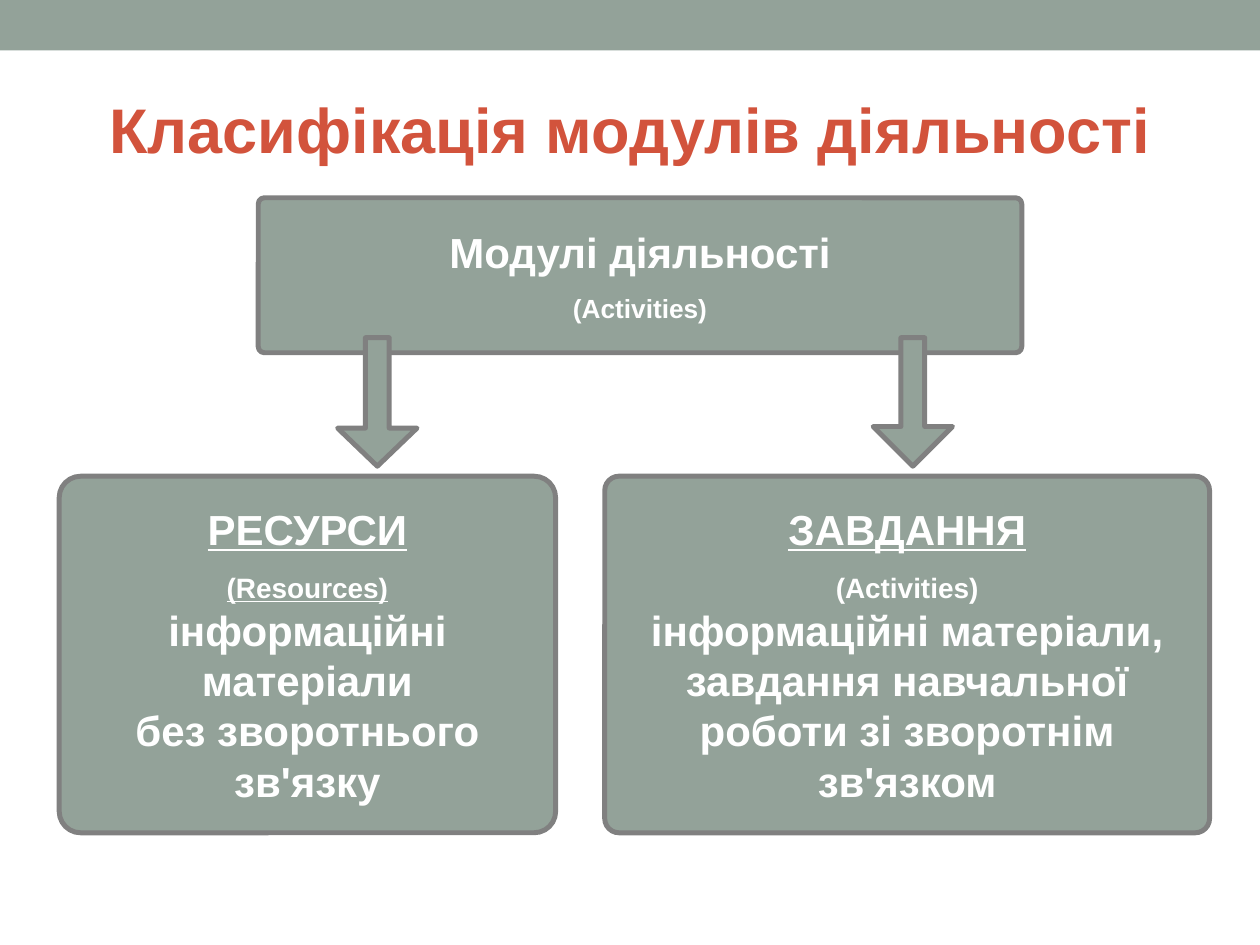
from dataclasses import dataclass

from pptx import Presentation
from pptx.dml.color import RGBColor
from pptx.enum.shapes import MSO_SHAPE
from pptx.enum.text import MSO_ANCHOR, PP_ALIGN
from pptx.slide import Slide
from pptx.util import Inches, Pt

RECTANGLE = MSO_SHAPE.RECTANGLE
ROUNDED = MSO_SHAPE.ROUNDED_RECTANGLE
DOWN_ARROW = MSO_SHAPE.DOWN_ARROW
MIDDLE = MSO_ANCHOR.MIDDLE
CENTER = PP_ALIGN.CENTER

SAGE = RGBColor(0x93, 0xA2, 0x99)
GRAY = RGBColor(0x80, 0x80, 0x80)
RED = RGBColor(0xD2, 0x53, 0x3C)
WHITE = RGBColor(0xFF, 0xFF, 0xFF)


@dataclass
class ModuleDiagram:
    """Draws the parts of the module diagram in one style."""

    slide: Slide
    font: str = "Arial"
    heading_size: int = 24
    outline_width: float = 2.83

    def add_lines(self, shape, lines, color):
        frame = shape.text_frame
        frame.word_wrap = True
        frame.vertical_anchor = MIDDLE
        for index, (text, size, underline, spacing) in enumerate(lines):
            paragraph = frame.add_paragraph() if index else frame.paragraphs[0]
            paragraph.alignment = CENTER
            paragraph.line_spacing = spacing
            run = paragraph.add_run()
            run.text = text
            run.font.name = self.font
            run.font.size = Pt(size)
            run.font.bold = True
            run.font.underline = underline
            run.font.color.rgb = color

    def title(self, text, left, top, width, height):
        box = self.slide.shapes.add_textbox(
            Inches(left), Inches(top), Inches(width), Inches(height))
        self.add_lines(box, [(text, 36, False, 1.0)], RED)

    def block(self, kind, left, top, width, height, adjustments=(), outlined=True):
        shape = self.slide.shapes.add_shape(
            kind, Inches(left), Inches(top), Inches(width), Inches(height))
        shape.shadow.inherit = False
        shape.fill.solid()
        shape.fill.fore_color.rgb = SAGE
        for index, value in enumerate(adjustments):
            shape.adjustments[index] = value
        if outlined:
            shape.line.color.rgb = GRAY
            shape.line.width = Pt(self.outline_width)
        else:
            shape.line.fill.background()
        return shape

    def card(self, left, top, width, height, rounding, heading, subtitle,
             subtitle_size, body=(), underlines=(False, False)):
        shape = self.block(ROUNDED, left, top, width, height, [rounding])
        lines = [(heading, self.heading_size, underlines[0], 1.0),
                 (subtitle, subtitle_size, underlines[1], 1.5)]
        lines += [(text, self.heading_size, False, 1.0) for text in body]
        self.add_lines(shape, lines, WHITE)

    def arrow(self, left, head_ratio):
        self.block(DOWN_ARROW, left, 2.68, 0.63, 1.02, [0.3, head_ratio])


def main():
    presentation = Presentation()
    presentation.slide_width = Inches(10)
    presentation.slide_height = Inches(7.5)
    slide = presentation.slides.add_slide(presentation.slide_layouts[6])
    diagram = ModuleDiagram(slide)

    diagram.block(RECTANGLE, 0, 0, 10, 0.4, outlined=False)
    diagram.title("Класифікація модулів діяльності", 0.5, 0.58, 9, 0.88)
    diagram.card(2.05, 1.57, 6.06, 1.23, 0.04,
                 "Модулі діяльності", "(Activities)", 15)
    diagram.arrow(2.68, 0.48)
    diagram.arrow(6.93, 0.5)
    diagram.card(0.47, 3.78, 3.94, 2.83, 0.06, "РЕСУРСИ", "(Resources)", 16,
                 ["інформаційні матеріали", "без зворотнього", "зв'язку"],
                 (True, True))
    diagram.card(4.8, 3.78, 4.8, 2.83, 0.04, "ЗАВДАННЯ", "(Activities)", 16,
                 ["інформаційні матеріали, завдання навчальної роботи "
                  "зі зворотнім зв'язком"],
                 (True, False))
    presentation.save("out.pptx")


if __name__ == "__main__":
    main()
